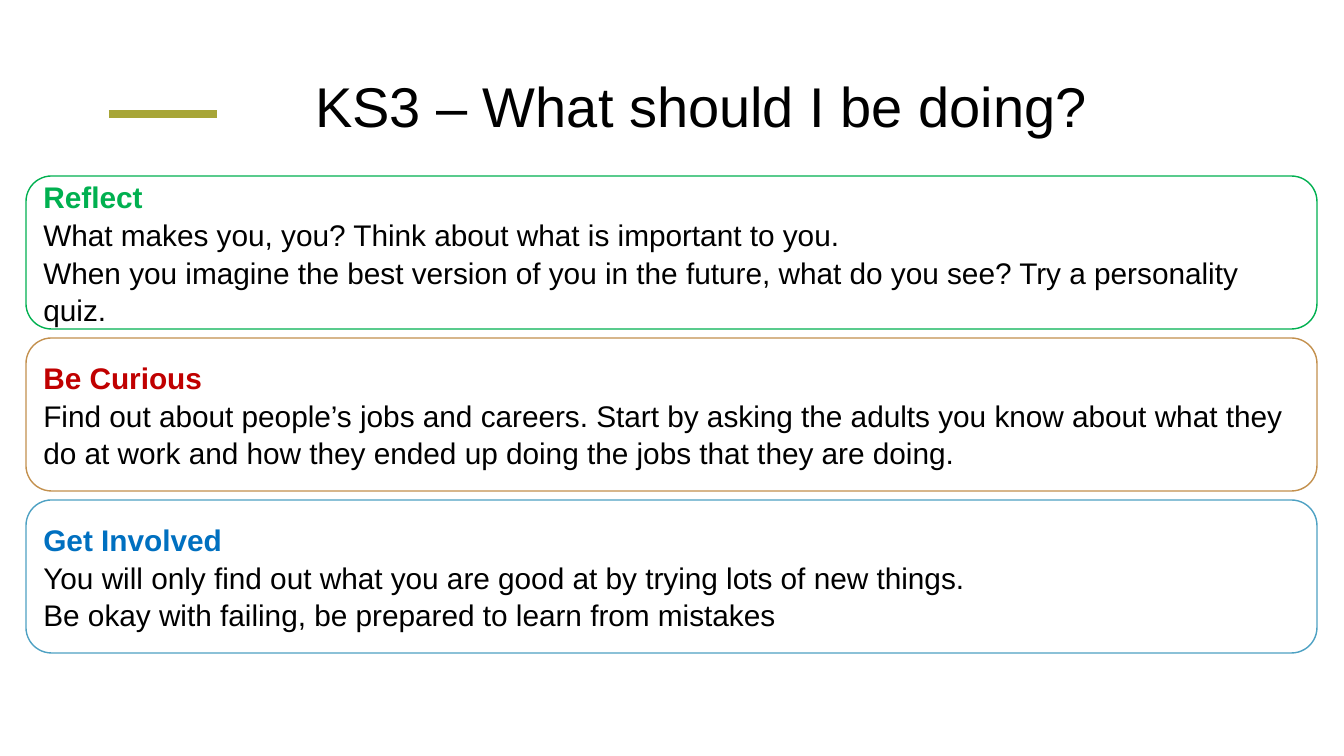
"""Build the KS3 careers guidance slide."""
from dataclasses import dataclass

from lxml import etree
from pptx import Presentation
from pptx import util as u
from pptx.dml.color import RGBColor
from pptx.enum import shapes, text

TITLE = "KS3 – What should I be doing?"
CARDS = [
    ("Reflect", "00B050", "00B050", [
        "What makes you, you? Think about what is important to you.",
        "When you imagine the best version of you in the future, what do you see? "
        "Try a personality quiz.",
    ]),
    ("Be Curious", "C00000", "C3904D", [
        "Find out about people’s jobs and careers. Start by asking the adults you know "
        "about what they do at work and how they ended up doing the jobs that they are doing.",
    ]),
    ("Get Involved", "0070C0", "4DA1C3", [
        "You will only find out what you are good at by trying lots of new things.",
        "Be okay with failing, be prepared to learn from mistakes",
    ]),
]


@dataclass(frozen=True)
class Theme:
    font: str = "Arial"
    ink: str = "000000"
    accent: str = "A7A537"
    title_size: float = 40
    body_size: float = 21.3
    body_spacing: float = 1.05
    accent_width: float = 6
    card_line: float = 1


THEME = Theme()
SLIDE_WIDTH, SLIDE_HEIGHT = 1344, 756
TITLE_BOX = (305, 60, 1142, 145)
TITLE_INSET = 12
ACCENT_LEFT, ACCENT_RIGHT, ACCENT_Y = 109, 217, 114
CARD_LEFT, CARD_TOP, CARD_WIDTH, CARD_HEIGHT, CARD_GAP = 26, 176, 1291, 153, 9


def px(length):
    return u.Emu(round(length * 914400 / 100.8))


def add_run(paragraph, words, size, color, bold=False):
    run = paragraph.add_run()
    run.text = words
    run.font.name = THEME.font
    run.font.size = u.Pt(size)
    run.font.bold = bold
    run.font.color.rgb = RGBColor.from_string(color)


def set_line(shape, color, width):
    shape.line.color.rgb = RGBColor.from_string(color)
    shape.line.width = u.Pt(width)


def add_accent(slide):
    accent = slide.shapes.add_connector(
        shapes.MSO_CONNECTOR.STRAIGHT,
        px(ACCENT_LEFT), px(ACCENT_Y), px(ACCENT_RIGHT), px(ACCENT_Y))
    set_line(accent, THEME.accent, THEME.accent_width)
    properties = accent._element.spPr
    namespace = properties.nsmap["a"]
    etree.SubElement(properties, f"{{{namespace}}}effectLst")


def fill_title(slide):
    title = slide.shapes.title
    title.left, title.top, title.width, title.height = map(px, TITLE_BOX)
    frame = title.text_frame
    frame.word_wrap = True
    frame.auto_size = text.MSO_AUTO_SIZE.NONE
    frame.vertical_anchor = text.MSO_ANCHOR.TOP
    frame.margin_top = px(TITLE_INSET)
    paragraph = frame.paragraphs[0]
    paragraph.alignment = text.PP_ALIGN.LEFT
    add_run(paragraph, TITLE, THEME.title_size, THEME.ink)


def add_card(slide, index, heading, heading_color, line_color, sentences):
    top = CARD_TOP + index * (CARD_HEIGHT + CARD_GAP)
    card = slide.shapes.add_shape(
        shapes.MSO_SHAPE.ROUNDED_RECTANGLE,
        px(CARD_LEFT), px(top), px(CARD_WIDTH), px(CARD_HEIGHT))
    card.shadow.inherit = False
    card.fill.background()
    set_line(card, line_color, THEME.card_line)
    frame = card.text_frame
    frame.word_wrap = True
    frame.vertical_anchor = text.MSO_ANCHOR.MIDDLE
    lines = [(heading, heading_color, True)]
    lines += [(sentence, THEME.ink, False) for sentence in sentences]
    for number, (words, color, bold) in enumerate(lines):
        paragraph = frame.add_paragraph() if number else frame.paragraphs[0]
        paragraph.alignment = text.PP_ALIGN.LEFT
        paragraph.line_spacing = THEME.body_spacing
        add_run(paragraph, words, THEME.body_size, color, bold)


def main():
    presentation = Presentation()
    presentation.slide_width = px(SLIDE_WIDTH)
    presentation.slide_height = px(SLIDE_HEIGHT)
    slide = presentation.slides.add_slide(presentation.slide_layouts[5])
    add_accent(slide)
    fill_title(slide)
    for index, card in enumerate(CARDS):
        add_card(slide, index, *card)
    presentation.save("out.pptx")


if __name__ == "__main__":
    main()
